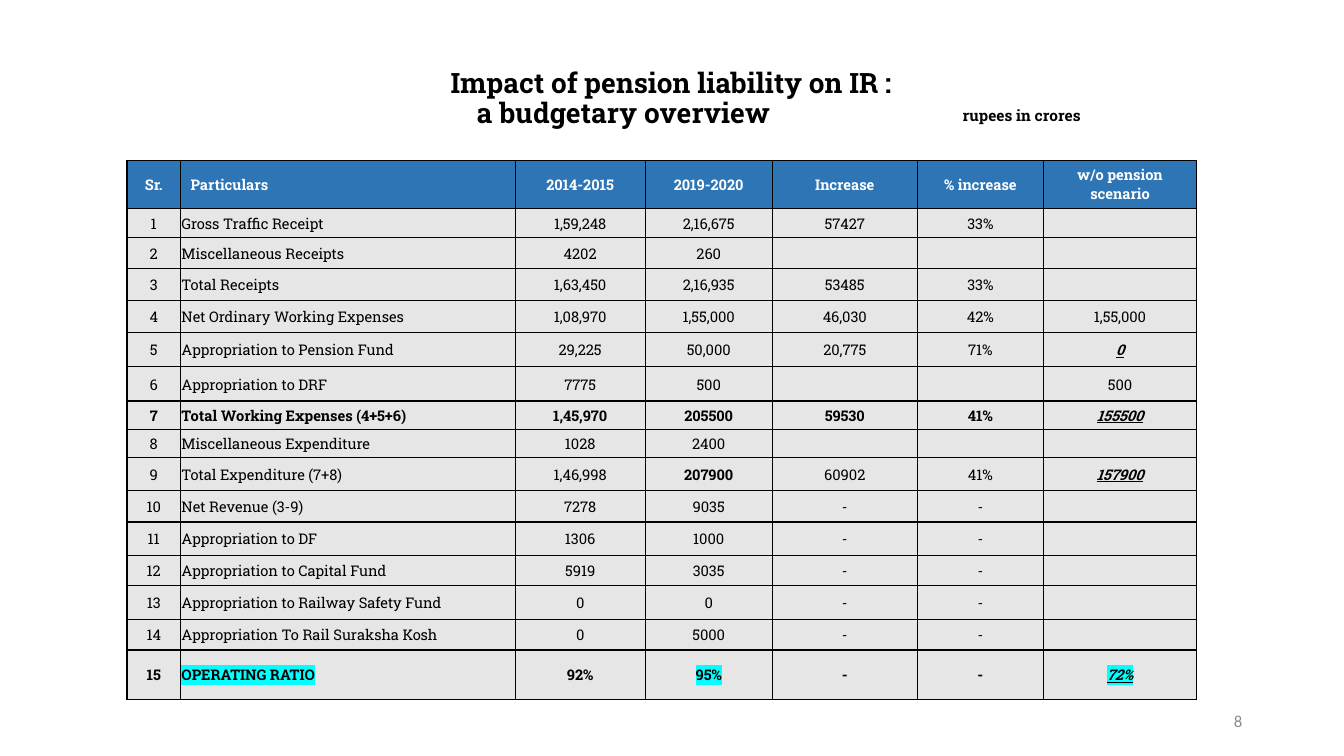
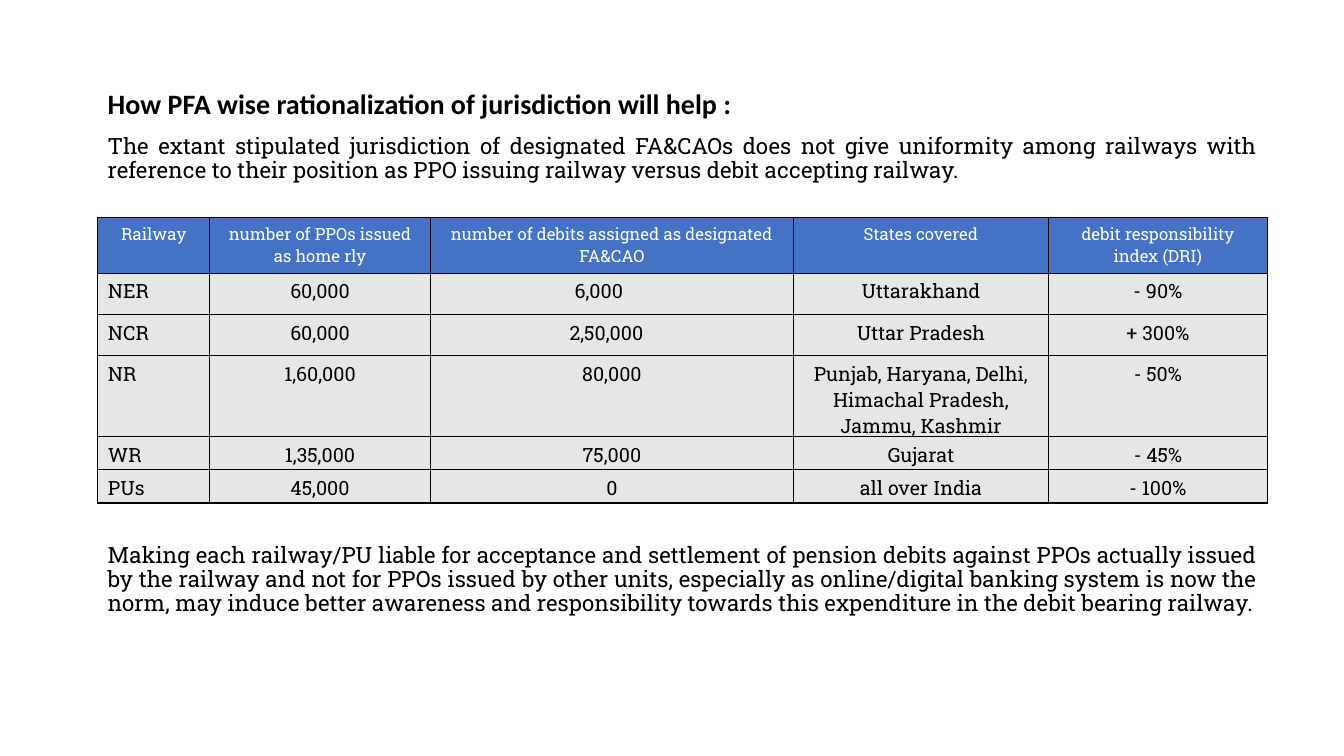
from lxml import etree
from pptx import Presentation
from pptx.dml.color import RGBColor
from pptx.enum.text import MSO_ANCHOR, PP_ALIGN
from pptx.oxml.ns import qn
from pptx.util import Inches, Pt

COLORS = {
    "ink": "000000",
    "white": "FFFFFF",
    "budget_header": "2E75B6",
    "railway_header": "4472C4",
    "cell": "E7E6E6",
    "highlight": "00FFFF",
    "page_number": "8C8C8C",
}
SLAB = "Roboto Slab"
SANS = "Calibri"

# Budget table
BUDGET_COLUMNS = [0.53, 3.32, 1.29, 1.26, 1.44, 1.25, 1.52]
BUDGET_HEIGHTS = [0.48, 0.29, 0.3, 0.32, 0.32, 0.34, 0.34, 0.28,
                  0.28, 0.33, 0.31, 0.33, 0.3, 0.34, 0.3, 0.49]
BUDGET_ROWS = [
    ["Sr.", "Particulars", "2014-2015", "2019-2020", "Increase", "% increase",
     "w/o pension\nscenario"],
    ["1", "Gross Traffic Receipt", "1,59,248", "2,16,675", "57427", "33%", ""],
    ["2", "Miscellaneous Receipts", "4202", "260", "", "", ""],
    ["3", "Total Receipts", "1,63,450", "2,16,935", "53485", "33%", ""],
    ["4", "Net Ordinary Working Expenses", "1,08,970", "1,55,000", "46,030", "42%", "1,55,000"],
    ["5", "Appropriation to Pension Fund", "29,225", "50,000", "20,775", "71%", "0"],
    ["6", "Appropriation to DRF", "7775", "500", "", "", "500"],
    ["7", "Total Working Expenses (4+5+6)", "1,45,970", "205500", "59530", "41%", "155500"],
    ["8", "Miscellaneous Expenditure", "1028", "2400", "", "", ""],
    ["9", "Total Expenditure (7+8)", "1,46,998", "207900", "60902", "41%", "157900"],
    ["10", "Net Revenue (3-9)", "7278", "9035", "-", "-", ""],
    ["11", "Appropriation to DF", "1306", "1000", "-", "-", ""],
    ["12", "Appropriation to Capital Fund", "5919", "3035", "-", "-", ""],
    ["13", "Appropriation to Railway Safety Fund", "0", "0", "-", "-", ""],
    ["14", "Appropriation To Rail Suraksha Kosh", "0", "5000", "-", "-", ""],
    ["15", "OPERATING RATIO", "92%", "95%", "-", "-", "72%"],
]
BOLD_ROWS = {0, 7, 15}
BOLD_CELLS = {(9, 3)}
SCENARIO_CELLS = {(5, 6), (7, 6), (9, 6), (15, 6)}
HIGHLIGHTED_CELLS = {(15, 1), (15, 3), (15, 6)}

# Railway table
RAILWAY_COLUMNS = [1.11, 2.19, 3.6, 2.53, 2.17]
RAILWAY_HEIGHTS = [0.55, 0.41, 0.41, 0.8, 0.33, 0.33]
RAILWAY_ROWS = [
    ["Railway", "number of PPOs issued as home rly",
     "number of debits assigned as designated FA&CAO", "States covered",
     "debit responsibility index (DRI)"],
    ["NER", "60,000", "6,000", "Uttarakhand", "- 90%"],
    ["NCR", "60,000", "2,50,000", "Uttar Pradesh", "+ 300%"],
    ["NR", "1,60,000", "80,000", "Punjab, Haryana, Delhi, Himachal Pradesh, Jammu, Kashmir",
     "- 50%"],
    ["WR", "1,35,000", "75,000", "Gujarat", "- 45%"],
    ["PUs", "45,000", "0", "all over India", "- 100%"],
]
DEBIT_MARGINS = {1: 0.36, 2: 0.21}

HEADING = "How PFA wise rationalization of jurisdiction will help :"
CURRENT_POSITION = (
    "The extant stipulated jurisdiction of designated FA&CAOs does not give uniformity "
    "among railways with reference to their position as PPO issuing railway versus debit "
    "accepting railway.")
PROPOSAL = (
    "Making each railway/PU liable for acceptance and settlement of pension debits against "
    "PPOs actually issued by the railway and not for PPOs issued by other units, especially "
    "as online/digital banking system is now the norm, may induce better awareness and "
    "responsibility towards this expenditure in the debit bearing railway.")


def rgb(name):
    return RGBColor.from_string(COLORS[name])


def format_paragraph(paragraph, size, font=SLAB, color="ink", bold=False,
                     align=PP_ALIGN.LEFT):
    paragraph.alignment = align
    for run in paragraph.runs:
        run.font.size = Pt(size)
        run.font.name = font
        run.font.bold = bold
        run.font.color.rgb = rgb(color)


def add_text(slide, box, lines, anchor=MSO_ANCHOR.TOP, spacing=0.9, **style):
    """Add a text box and return its paragraphs, all in one style."""
    frame = slide.shapes.add_textbox(*map(Inches, box)).text_frame
    frame.word_wrap = True
    frame.vertical_anchor = anchor
    frame.text = "\n".join(lines)
    for paragraph in frame.paragraphs:
        paragraph.line_spacing = spacing
        format_paragraph(paragraph, **style)
    return frame.paragraphs


def set_borders(cell):
    properties = cell._tc.get_or_add_tcPr()
    for position, side in enumerate(("lnL", "lnR", "lnT", "lnB")):
        line = etree.Element(qn(f"a:{side}"), w=str(Pt(1)))
        fill = etree.SubElement(line, qn("a:solidFill"))
        etree.SubElement(fill, qn("a:srgbClr"), val=COLORS["ink"])
        properties.insert(position, line)


def highlight(run):
    mark = etree.Element(qn("a:highlight"))
    etree.SubElement(mark, qn("a:srgbClr"), val=COLORS["highlight"])
    run.font._element.find(qn("a:solidFill")).addnext(mark)


def fill_cell(cell, text, fill, size, **style):
    cell.text = text
    cell.fill.solid()
    cell.fill.fore_color.rgb = rgb(fill)
    set_borders(cell)
    for paragraph in cell.text_frame.paragraphs:
        format_paragraph(paragraph, size, **style)
        if not text:  # an empty cell must not stretch its row
            etree.SubElement(paragraph._p, qn("a:endParaRPr"), sz=str(int(size * 100)))


def add_grid(slide, left, top, columns, heights, rows, header_fill, sizes,
             left_cells, bold_rows=()):
    """Add a bordered table; sizes holds the header and body text sizes."""
    table = slide.shapes.add_table(
        len(rows), len(columns), Inches(left), Inches(top),
        Inches(sum(columns)), Inches(sum(heights))).table
    table.horz_banding = False
    for column, width in zip(table.columns, columns):
        column.width = Inches(width)
    for row, height in zip(table.rows, heights):
        row.height = Inches(height)
    for r, values in enumerate(rows):
        header = r == 0
        for c, value in enumerate(values):
            fill_cell(
                table.cell(r, c), value,
                fill=header_fill if header else "cell",
                size=sizes[0] if header else sizes[1],
                color="white" if header else "ink",
                bold=r in bold_rows,
                align=PP_ALIGN.LEFT if left_cells(r, c) else PP_ALIGN.CENTER)
    return table


def build_budget_slide(slide):
    # Title, unit and page number
    title = add_text(slide, (4.37, 0.26, 5, 1.45),
                     ["Impact of pension liability on IR :", "a budgetary overview"],
                     anchor=MSO_ANCHOR.MIDDLE, size=20, bold=True)
    title[1]._p.get_or_add_pPr().set("marL", str(Inches(0.26)))
    add_text(slide, (9.45, 1.01, 1.6, 0.3), ["rupees in crores"],
             anchor=MSO_ANCHOR.MIDDLE, size=11, bold=True)
    add_text(slide, (9.42, 6.95, 3, 0.4), ["8"], anchor=MSO_ANCHOR.MIDDLE, spacing=1,
             size=12, font=SANS, color="page_number", align=PP_ALIGN.RIGHT)

    # Budget figures
    table = add_grid(slide, 1.26, 1.59, BUDGET_COLUMNS, BUDGET_HEIGHTS, BUDGET_ROWS,
                     "budget_header", (10.5, 10.5), lambda r, c: c == 1, BOLD_ROWS)
    for r in range(len(BUDGET_ROWS)):
        for c in range(len(BUDGET_COLUMNS)):
            cell = table.cell(r, c)
            cell.vertical_anchor = MSO_ANCHOR.MIDDLE
            if r:
                cell.margin_left = cell.margin_right = cell.margin_top = Inches(0.01)
                cell.margin_bottom = 0

    # Emphasis on single figures
    for r, c in BOLD_CELLS | SCENARIO_CELLS | HIGHLIGHTED_CELLS:
        run = table.cell(r, c).text_frame.paragraphs[0].runs[0]
        run.font.bold = True
        if (r, c) in SCENARIO_CELLS:
            run.font.italic = run.font.underline = True
        if (r, c) in HIGHLIGHTED_CELLS:
            highlight(run)


def build_jurisdiction_slide(slide):
    # Heading and current position
    heading, position = add_text(slide, (0.97, 0.85, 11.6, 1.1),
                                 [HEADING, CURRENT_POSITION],
                                 size=16, align=PP_ALIGN.JUSTIFY)
    format_paragraph(heading, 20, font=SANS, bold=True)
    position.space_before = Pt(10)

    # Railway comparison
    table = add_grid(slide, 0.97, 2.16, RAILWAY_COLUMNS, RAILWAY_HEIGHTS, RAILWAY_ROWS,
                     "railway_header", (12, 14), lambda r, c: r > 0 and c == 0)
    for cell in table.iter_cells():
        cell.margin_bottom = 0
    for r, margin in DEBIT_MARGINS.items():
        table.cell(r, 2).margin_right = Inches(margin)

    # Proposal
    add_text(slide, (0.97, 5.35, 11.6, 0.9), [PROPOSAL], size=16, align=PP_ALIGN.JUSTIFY)


def main():
    presentation = Presentation()
    presentation.slide_width = Inches(13.33)
    presentation.slide_height = Inches(7.5)
    blank = presentation.slide_layouts[6]
    for build in (build_budget_slide, build_jurisdiction_slide):
        build(presentation.slides.add_slide(blank))
    presentation.save("out.pptx")


if __name__ == "__main__":
    main()
